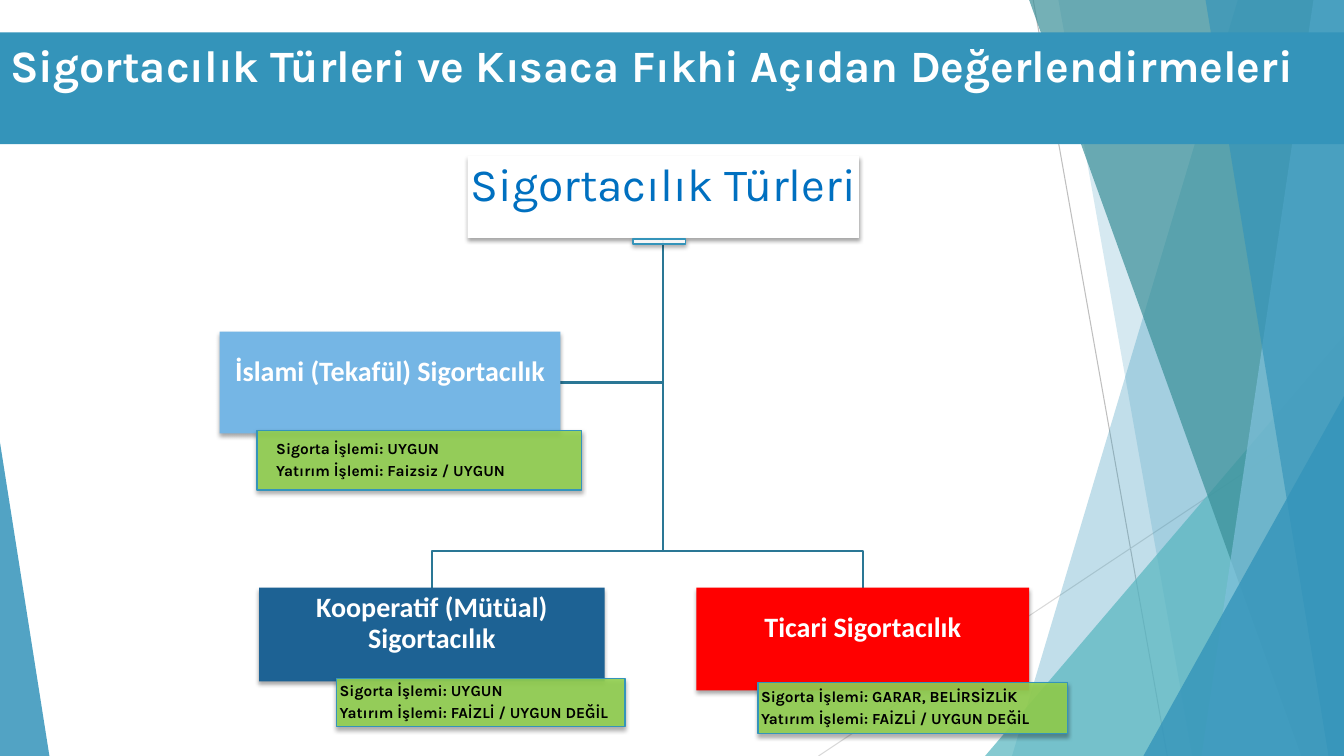
from dataclasses import dataclass

from lxml import etree
from pptx import Presentation
from pptx import util as u
from pptx.dml.color import RGBColor
from pptx.enum import shapes, text
from pptx.oxml import ns

CELL = u.Inches(0.1)  # one column or row of the layout grid
COLUMNS, ROWS = 133.33, 75


@dataclass(frozen=True)
class Theme:
    heading_font: str = "Karla"
    node_font: str = "Calibri"
    title_size: int = 32
    root_size: int = 33
    node_size: int = 20
    verdict_size: int = 11
    accent: str = "3494BA"
    teal: str = "58B6C0"
    dark_teal: str = "3A8F98"
    light_blue: str = "7FC1DB"
    branch_line: str = "2A7795"
    root_text: str = "0070C0"
    verdict: str = "92D050"
    takaful: str = "75B6E5"
    mutual: str = "1D6294"
    commercial: str = "FF0000"
    white: str = "FFFFFF"
    black: str = "000000"
    guide: str = "BFBFBF"
    light_guide: str = "D9D9D9"


THEME = Theme()


@dataclass(frozen=True)
class Box:
    """An area in grid columns and rows."""
    left: float
    top: float
    width: float
    height: float

    def emu(self):
        return [round(value * CELL) for value in (self.left, self.top, self.width, self.height)]

    def point(self, column, row):
        """A grid point counted from the box's own corner."""
        return round((self.left + column) * CELL), round((self.top + row) * CELL)

    def inner(self, column, row, width, height):
        return Box(self.left + column, self.top + row, width, height)


def paint(shape, colour, opacity=100, line=None):
    shape.shadow.inherit = False
    shape.fill.solid()
    shape.fill.fore_color.rgb = RGBColor.from_string(colour)
    if opacity < 100:
        srgb = shape.element.spPr.find(ns.qn("a:solidFill"))[0]
        etree.SubElement(srgb, ns.qn("a:alpha"), val=str(opacity * 1000))
    if line:
        shape.line.color.rgb = RGBColor.from_string(line)
        shape.line.width = u.Pt(1)
    else:
        shape.line.fill.background()


def cast_shadow(shape):
    effects = shape.element.spPr.find(ns.qn("a:effectLst"))
    outer = etree.SubElement(effects, ns.qn("a:outerShdw"), blurRad=str(u.Pt(3)),
                             dist=str(u.Pt(2)), dir="5400000", rotWithShape="0")
    srgb = etree.SubElement(outer, ns.qn("a:srgbClr"), val=THEME.black)
    etree.SubElement(srgb, ns.qn("a:alpha"), val="35000")


def add_card(slide, box, colour, opacity=100, line=None):
    card = slide.shapes.add_shape(shapes.MSO_SHAPE.RECTANGLE, *box.emu())
    paint(card, colour, opacity, line)
    cast_shadow(card)
    return card


def write(shape, content, font, size, colour, bold, align, insets):
    """Fill a card with text; insets are left, top, right, bottom in inches."""
    frame = shape.text_frame
    frame.word_wrap = True
    frame.vertical_anchor = text.MSO_ANCHOR.MIDDLE
    (frame.margin_left, frame.margin_top,
     frame.margin_right, frame.margin_bottom) = map(u.Inches, insets)
    frame.text = content
    for paragraph in frame.paragraphs:
        paragraph.alignment = align
        paragraph.line_spacing = 0.9
        paragraph.space_after = u.Pt(0.35 * size)
        format_run(paragraph.runs[0], font, size, colour, bold)


def format_run(run, font, size, colour, bold):
    run.font.name, run.font.size, run.font.bold = font, u.Pt(size), bold
    run.font.color.rgb = RGBColor.from_string(colour)


def add_guide(slide, start, end, colour):
    guide = slide.shapes.add_connector(shapes.MSO_CONNECTOR.STRAIGHT, *start, *end)
    guide.line.color.rgb = RGBColor.from_string(colour)
    guide.line.width = u.Pt(0.75)
    etree.SubElement(guide.element.spPr, ns.qn("a:effectLst"))


def add_facet(slide, box, top, bottom, colour, opacity):
    """Full-height facet: slanted left edge from top to bottom, straight right edge."""
    builder = slide.shapes.build_freeform(*box.point(top, 0))
    builder.add_line_segments([box.point(box.width, 0), box.point(box.width, box.height),
                               box.point(bottom, box.height)])
    paint(builder.convert_to_shape(), colour, opacity)


def add_corner(slide, box, apex, colour, opacity):
    corner = slide.shapes.add_shape(shapes.MSO_SHAPE.ISOSCELES_TRIANGLE, *box.emu())
    corner.adjustments[0] = apex
    paint(corner, colour, opacity)


def add_right_decor(slide, box):
    right, bottom = box.width, box.height
    add_guide(slide, box.point(21.3, 0), box.point(34.6, bottom), THEME.guide)
    add_guide(slide, box.point(right, 40.3), box.point(0, bottom), THEME.light_guide)
    add_facet(slide, box, 41.6, 19.2, THEME.accent, 30)
    add_facet(slide, box, 23.8, 37.1, THEME.accent, 20)
    add_corner(slide, box.inner(right - 35.6, bottom - 41.7, 35.6, 41.7), 1, THEME.teal, 72)
    add_facet(slide, box, 20.9, 47.9, THEME.dark_teal, 70)
    add_facet(slide, box, 49.1, 38, THEME.light_blue, 70)
    add_facet(slide, box, 38.4, 50.6, THEME.accent, 65)
    add_corner(slide, box.inner(right - 19.9, bottom - 35.7, 19.9, 35.7), 1, THEME.accent, 80)


def place_title(slide, box, content):
    title = slide.shapes.title
    title.element.getparent().append(title.element)  # in front of the decor
    title.left, title.top, title.width, title.height = box.emu()
    paint(title, THEME.accent)
    frame = title.text_frame
    frame.text = content
    frame.auto_size = text.MSO_AUTO_SIZE.NONE
    frame.vertical_anchor = text.MSO_ANCHOR.TOP
    paragraph = frame.paragraphs[0]
    paragraph.alignment = text.PP_ALIGN.LEFT
    format_run(paragraph.runs[0], THEME.heading_font, THEME.title_size, THEME.white, True)


def add_branch_line(slide, points):
    builder = slide.shapes.build_freeform(*points[0])
    builder.add_line_segments(points[1:], close=False)
    line = builder.convert_to_shape()
    line.shadow.inherit = False
    line.fill.background()
    line.line.color.rgb = RGBColor.from_string(THEME.branch_line)
    line.line.width = u.Pt(1.5)


def add_root(slide, box, content):
    root = add_card(slide, box, THEME.white)
    write(root, content, THEME.heading_font, THEME.root_size, THEME.root_text, False,
          text.PP_ALIGN.CENTER, (0.02, 0.02, 0.02, 0.22))
    add_card(slide, box.inner(16.4, box.height + 0.1, 5.2, 0.5), THEME.white, 90, THEME.accent)


def add_node(slide, box, content, colour, verdict_box, verdict, indent=0.03):
    """A kind of insurance with its verdict overlapping the lower edge."""
    node = add_card(slide, box, colour)
    write(node, content, THEME.node_font, THEME.node_size, THEME.white, True,
          text.PP_ALIGN.CENTER, (0.01, 0.01, 0.01, 0.22))
    label = add_card(slide, verdict_box, THEME.verdict, 90, THEME.accent)
    write(label, verdict, THEME.heading_font, THEME.verdict_size, THEME.black, True,
          text.PP_ALIGN.LEFT, (indent, 0.01, 0.03, 0.01))


def add_insurance_chart(slide, box):
    root = box.inner(24.6, 0, 38.8, 8.1)
    takaful = box.inner(0, 17.4, 33.8, 10.1)
    mutual = box.inner(3.9, 42.8, 34.3, 9.3)
    commercial = box.inner(47.3, 42.8, 33, 10.2)
    stem, fork = root.left + root.width / 2 - box.left, 39.2
    foot = box.point(stem, root.height)

    side = takaful.top + takaful.height / 2 - box.top
    add_branch_line(slide, [foot, box.point(stem, side), box.point(takaful.width, side)])
    for node in (commercial, mutual):
        middle = node.left + node.width / 2 - box.left
        add_branch_line(slide, [foot, box.point(stem, fork), box.point(middle, fork),
                                box.point(middle, node.top - box.top)])

    add_root(slide, root, "Sigortacılık Türleri")
    add_node(slide, mutual, "Kooperatif (Mütüal) Sigortacılık", THEME.mutual,
             mutual.inner(7.7, 9, 28.6, 4.8),
             "Sigorta İşlemi: UYGUN\nYatırım İşlemi: FAİZLİ / UYGUN DEĞİL")
    add_node(slide, commercial, "Ticari Sigortacılık", THEME.commercial,
             commercial.inner(6.1, 9.4, 30.7, 5.1),
             "Sigorta İşlemi: GARAR, BELİRSİZLİK\nYatırım İşlemi: FAİZLİ / UYGUN DEĞİL")
    add_node(slide, takaful, "İslami (Tekafül) Sigortacılık", THEME.takaful,
             takaful.inner(3.7, 9.8, 32.2, 5.9),
             "Sigorta İşlemi: UYGUN\nYatırım İşlemi: Faizsiz / UYGUN", indent=0.19)


def main():
    presentation = Presentation()
    presentation.slide_width = round(COLUMNS * CELL)
    presentation.slide_height = round(ROWS * CELL)
    slide = presentation.slides.add_slide(presentation.slide_layouts[5])
    add_right_decor(slide, Box(81.2, 0, COLUMNS - 81.2, ROWS))
    add_corner(slide, Box(0, ROWS - 31.1, 4.9, 31.1), 0, THEME.accent, 85)
    place_title(slide, Box(0, 3.2, COLUMNS, 11.1),
                "Sigortacılık Türleri ve Kısaca Fıkhi Açıdan Değerlendirmeleri")
    add_insurance_chart(slide, Box(21.8, 15.5, 84.1, 57.3))
    presentation.save("out.pptx")


if __name__ == "__main__":
    main()
